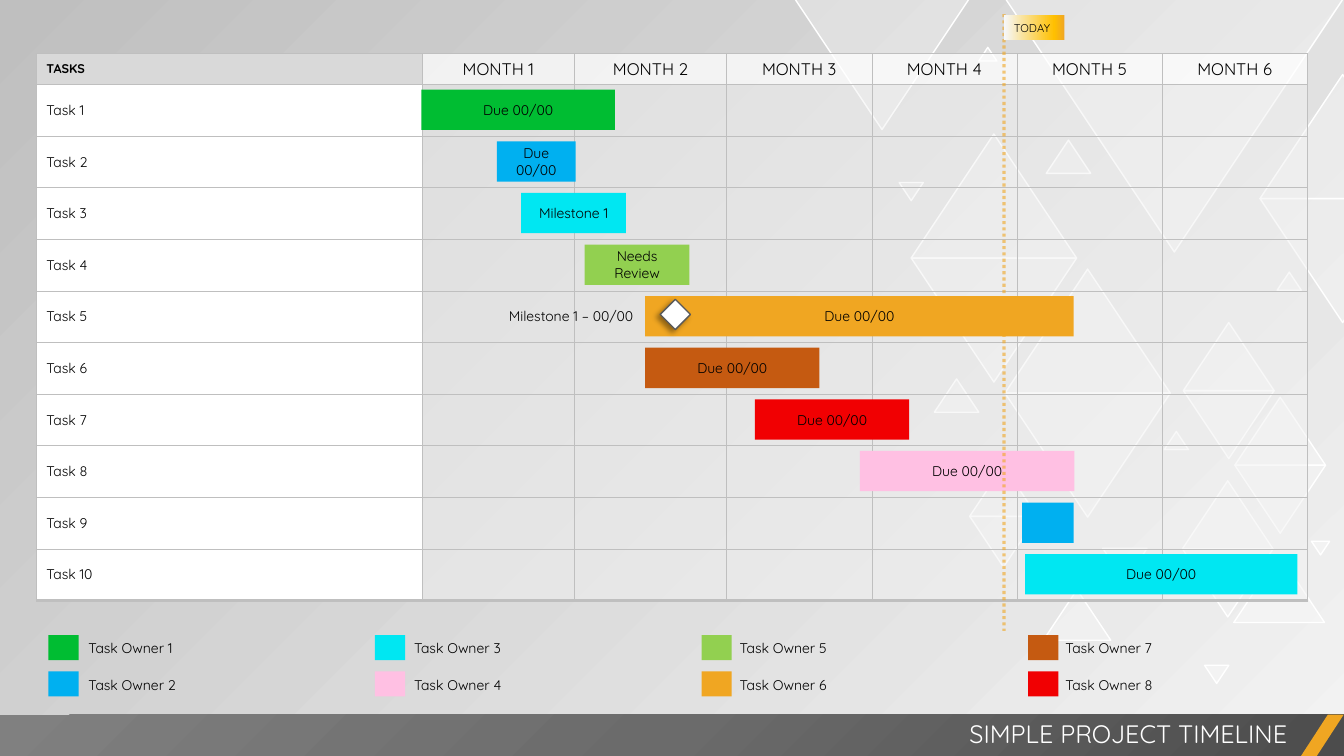
from lxml.etree import SubElement
from pptx import Presentation
from pptx.dml.color import RGBColor
from pptx.enum.dml import MSO_LINE as Dash
from pptx.enum.shapes import MSO_CONNECTOR as Link, MSO_SHAPE as Form
from pptx.enum.text import MSO_ANCHOR as Anchor, MSO_AUTO_SIZE as Auto, PP_ALIGN as Align
from pptx.oxml.ns import qn
from pptx.util import Inches, Pt

FONT = "Quicksand"
BLACK, WHITE, GREY, ORANGE = "000000", "FFFFFF", "BFBFBF", "F0A622"
GREEN, BLUE, CYAN, PINK = "00BD32", "00B0F0", "00E7F2", "FFC0E3"
LIME, BROWN, RED = "92D050", "C55A11", "F10002"


def tint(code):
    return RGBColor.from_string(code)


def sub(root, tag, **attrs):
    return SubElement(root, qn(tag), {k: str(v) for k, v in attrs.items()})


def fade(root, share):
    """Give the first solid colour under root an opacity in percent."""
    sub(root.find(".//" + qn("a:srgbClr")), "a:alpha", val=share * 1000)


def blend(fill, root, stops, angle=None):
    """Linear gradient at an angle, or a circle from the lower right corner."""
    fill.gradient()
    grad = root.find(".//" + qn("a:gradFill"))
    for child in list(grad):
        grad.remove(child)
    marks = sub(grad, "a:gsLst")
    for place, code, *share in stops:
        color = sub(sub(marks, "a:gs", pos=place * 1000), "a:srgbClr", val=code)
        if share:
            sub(color, "a:alpha", val=share[0] * 1000)
    if angle is None:
        sub(sub(grad, "a:path", path="circle"), "a:fillToRect", l=100000, t=100000)
    else:
        sub(grad, "a:lin", ang=angle * 60000, scaled=0)


class Board:
    """One slide on a grid of ten columns and ten rows to the inch."""

    def __init__(self):
        self.deck = Presentation()
        self.deck.slide_width, self.deck.slide_height = self.grid(133.33, 75)
        self.slide = self.deck.slides.add_slide(self.deck.slide_layouts[5])
        self.host = self.slide.shapes

    def grid(self, *units):
        return [Inches(u / 10) for u in units]

    def group(self):
        return self.host.add_group_shape().shapes

    def words(self, frame, text, size=10, color=BLACK, align=Align.LEFT, bold=False):
        frame.text = text
        para = frame.paragraphs[0]
        para.alignment = align
        for run in para.runs:
            font = run.font
            font.name, font.size, font.bold = FONT, Pt(size), bold
            font.color.rgb = tint(color)

    def shape(self, form, box, fill=None, line=None, alpha=None, host=None):
        item = (host or self.host).add_shape(form, *self.grid(*box))
        item.shadow.inherit = False
        if fill:
            item.fill.solid()
            item.fill.fore_color.rgb = tint(fill)
        if alpha:
            fade(item.element, alpha)
        if line:
            item.line.color.rgb = tint(line)
            item.line.width = Pt(1)
        else:
            item.line.fill.background()
        return item

    def bar(self, box, fill, text="", size=10, align=Align.CENTER, host=None):
        item = self.shape(Form.RECTANGLE, box, fill, host=host)
        item.text_frame.vertical_anchor = Anchor.MIDDLE
        if text:
            self.words(item.text_frame, text, size, align=align)
        return item

    def label(self, box, text, anchor=Anchor.TOP, align=Align.LEFT):
        frame = self.host.add_textbox(*self.grid(*box)).text_frame
        frame.word_wrap = True
        frame.vertical_anchor = anchor
        self.words(frame, text, align=align)

    def title(self, box, text):
        item = self.host.title
        item.left, item.top, item.width, item.height = self.grid(*box)
        frame = item.text_frame
        frame.auto_size, frame.word_wrap = Auto.NONE, True
        frame.vertical_anchor = Anchor.TOP
        self.words(frame, text, 18, WHITE, Align.RIGHT)
        tree = item.element.getparent()
        tree.append(item.element)  # in front of the footer band

    def cell(self, cell, fill, alpha=None, base=0.5):
        cell.vertical_anchor = Anchor.MIDDLE
        cell.fill.solid()
        cell.fill.fore_color.rgb = tint(fill)
        props = cell._tc.get_or_add_tcPr()
        if alpha:
            fade(props, alpha)
        for spot, side in enumerate("LRTB"):
            width = base if side == "B" else 0.5
            edge = sub(props, "a:ln" + side, w=Pt(width))
            sub(sub(edge, "a:solidFill"), "a:srgbClr", val=GREY)
            props.insert(spot, edge)

    def line(self, start, end, color, width, alpha, host):
        item = host.add_connector(Link.STRAIGHT, *self.grid(*start, *end))
        item.line.color.rgb = tint(color)
        item.line.width = Pt(width)
        item.line.dash_style = Dash.ROUND_DOT
        fade(item.element, alpha)
        sub(item.element.spPr, "a:effectLst")


def main():
    board = Board()
    slide = board.slide
    blend(slide.background.fill, slide.element, [(0, "F2F2F2", 40), (100, GREY)], 225)

    # Backdrop triangles: left, top, width; a pair is mirrored downwards
    pairs = [(90.4, 13.3, 16.4), (99.7, 26.7, 16.4), (117.3, 47.7, 9), (117.4, 32, 9),
             (122.5, 39.4, 9), (96.2, 46.2, 6.7), (125, 7.4, 16.4)]
    ups = [(122.4, 55, 9), (103.5, 58.5, 6.7), (92.7, 37.6, 4.4), (115.5, 42.8, 2.4),
           (126.7, 27, 2.4), (97.1, 4.7, 1.8), (103.8, 13.9, 4.4)]
    downs = [(99.7, -0.2, 33.6), (109.4, 54.4, 4.4), (119.5, 66, 2.4),
             (89.2, 18.1, 2.4), (130.1, 53.7, 1.8), (78.8, -0.2, 17.4)]
    slope = 0.75
    downs += [(x, y + slope * w, w) for x, y, w in pairs]
    group = board.group()
    for turn, places in ((0, ups + pairs), (180, downs)):
        for x, y, w in places:
            box = (x, y, w, slope * w)
            board.shape(Form.ISOSCELES_TRIANGLE, box, WHITE, WHITE, 30, group).rotation = turn

    # Footer band and title
    band = board.shape(Form.RECTANGLE, (0, 70.9, 133.33, 4.1))
    blend(band.fill, band.element, [(0, "4C4C4C"), (50, "6B6B6B"), (100, "808080")])
    slash = board.shape(Form.PARALLELOGRAM, (129, 70.9, 4.3, 4.2), ORANGE)
    slash.adjustments[0] = 0.65
    board.title((52.5, 70.8, 76.2, 4), "SIMPLE PROJECT TIMELINE")

    # Task table
    tasks, months, head, step = 10, 6, 3, 5.12
    left, top = 3.6, 5.3
    cols = [38.3] + [15.1] * 2 + [14.4] * 4
    box = board.grid(left, top, sum(cols), head + tasks * step)
    table = board.host.add_table(tasks + 1, months + 1, *box).table
    table.horz_banding = False
    for col, width in zip(table.columns, board.grid(*cols)):
        col.width = width
    for r, row in enumerate(table.rows):
        row.height = board.grid(step if r else head)[0]
        base = 3 if r == tasks else 0.5
        for c, cell in enumerate(row.cells):
            if c == 0:
                board.cell(cell, WHITE if r else "D9D9D9", base=base)
                board.words(cell.text_frame, f"Task {r}" if r else "TASKS",
                            10 if r else 9, bold=not r)
            elif r == 0:
                board.cell(cell, WHITE, 75)
                board.words(cell.text_frame, f"MONTH {c}", 12, align=Align.CENTER)
            else:
                board.cell(cell, "F2F2F2", 50, base)

    # Task bars: left, width, colour, text
    due, tall = "Due 00/00", 4
    bars = [(41.8, 19.2, GREEN, due), (49.3, 7.8, BLUE, due),
            (51.7, 10.4, CYAN, "Milestone 1"), (58, 10.4, LIME, "Needs Review"),
            (64, 42.5, ORANGE, due), (64, 17.3, BROWN, due), (74.9, 15.3, RED, due),
            (85.3, 21.3, PINK, due), (101.4, 5.1, BLUE, ""), (101.7, 27, CYAN, due)]
    first = top + head + 0.6
    for i, (x, w, fill, text) in enumerate(bars):
        board.bar((x, first + i * step, w, tall), fill, text)

    # Legend of task owners
    owners = [GREEN, BLUE, CYAN, PINK, LIME, ORANGE, BROWN, RED]
    for i, fill in enumerate(owners):
        c, r = divmod(i, 2)
        y = 63 + 3.6 * r
        board.bar((4.8 + 32.4 * c, y, 3, 2.5), fill)
        board.label((7.8 + 32.3 * c, y, 24, 2.7), f"Task Owner {i + 1}")

    # Today marker
    today, group = 99.6, board.group()
    tag = board.bar((today, 1.5, 6, 2.5), None, "TODAY", 8, Align.LEFT, group)
    blend(tag.fill, tag.element, [(0, "F6F8FC"), (83, "FFC000"), (100, ORANGE)], 0)
    board.line((today, 1.4), (today, 62.6), ORANGE, 2.25, 60, group)

    # Milestone
    gem = board.shape(Form.DIAMOND, (65.5, 29.7, 3, 3), WHITE, "595959")
    shade = sub(gem.element.spPr.find(qn("a:effectLst")), "a:outerShdw",
                blurRad=Pt(4), dist=Pt(3), dir=135 * 60000, algn="tr", rotWithShape=0)
    sub(sub(shade, "a:srgbClr", val=BLACK), "a:alpha", val=40000)
    board.label((42.1, 29.3, 21.7, tall), "Milestone 1 – 00/00", Anchor.MIDDLE, Align.RIGHT)

    board.deck.save("out.pptx")


if __name__ == "__main__":
    main()
